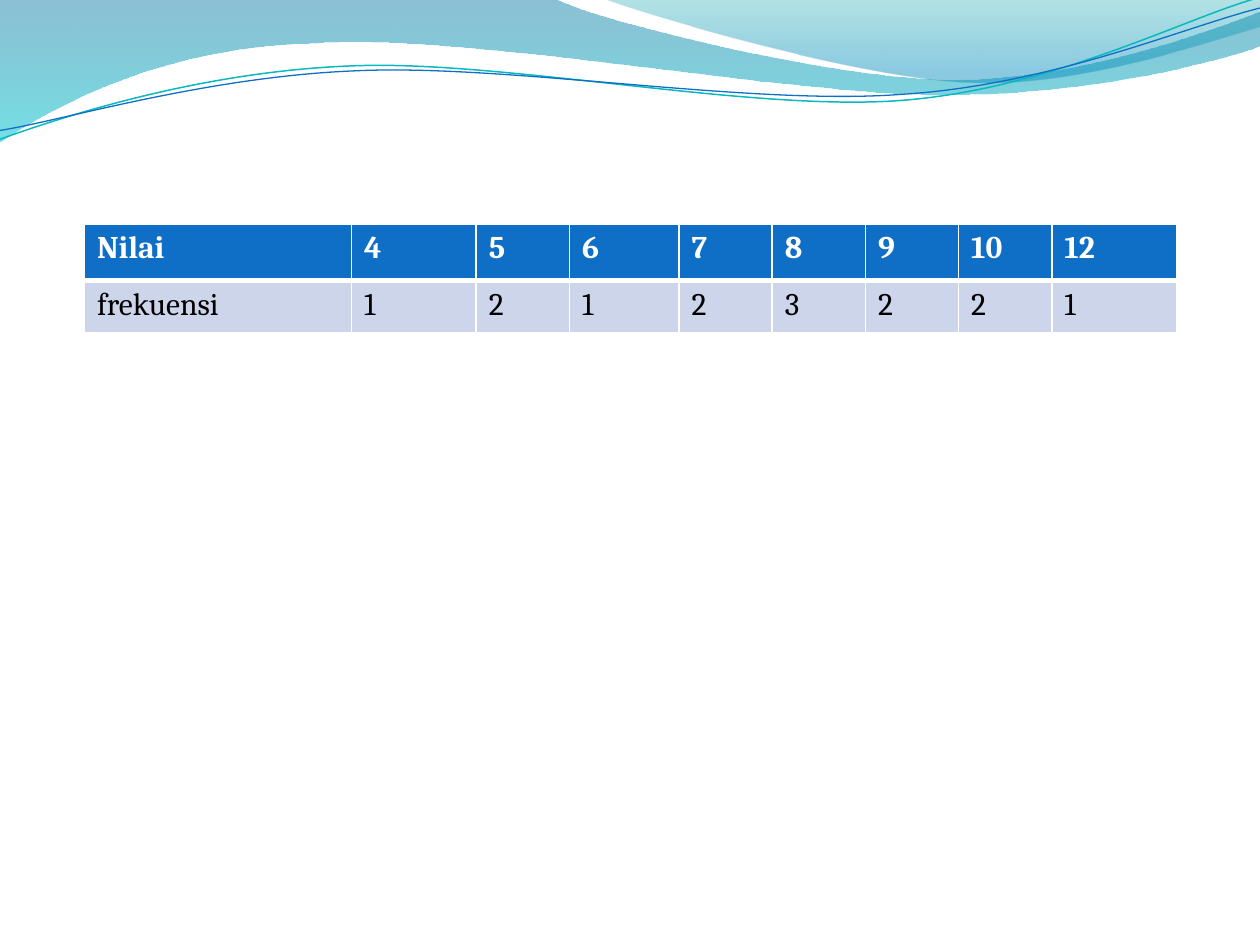
import pptx
import pptx.dml.color
import pptx.oxml
import pptx.oxml.ns
import pptx.util

WHITE = pptx.dml.color.RGBColor(0xFF, 0xFF, 0xFF)
BLACK = pptx.dml.color.RGBColor(0x00, 0x00, 0x00)
BLUE = pptx.dml.color.RGBColor(0x0F, 0x6F, 0xC6)
TEAL = pptx.dml.color.RGBColor(0x0A, 0xB8, 0xBF)
PALE_BLUE = pptx.dml.color.RGBColor(0xCC, 0xD5, 0xEA)
DEEP_SEA = pptx.dml.color.RGBColor(0x00, 0x74, 0xA1)
CYAN = pptx.dml.color.RGBColor(0x00, 0xC6, 0xCF)
SEA_GREEN = pptx.dml.color.RGBColor(0x00, 0xA1, 0xA9)
SKY = pptx.dml.color.RGBColor(0x00, 0x8B, 0xBF)

presentation = pptx.Presentation()
presentation.slide_width = pptx.util.Inches(10)
presentation.slide_height = pptx.util.Inches(7.5)
COLUMN = presentation.slide_width / 100
ROW = presentation.slide_height / 75
slide = presentation.slides.add_slide(presentation.slide_layouts[6])


def add_wave(start, segments, closed):
    points = [start, *(point for segment in segments for point in segment)]
    scaled = [(x * COLUMN, y * ROW) for x, y in points]
    builder = slide.shapes.build_freeform(*scaled[0], scale=1.0)
    builder.add_line_segments(scaled[1:], close=closed)
    shape = builder.convert_to_shape()
    shape.shadow.inherit = False
    lines = iter(shape._element.xpath(".//a:path/a:lnTo"))
    for segment in segments:
        controls = [next(lines) for point in segment]
        if len(controls) == 3:
            curve = pptx.oxml.parse_xml(
                f'<a:cubicBezTo {pptx.oxml.ns.nsdecls("a")}/>'
            )
            controls[0].addprevious(curve)
            for control in controls:
                curve.append(control[0])
                control.getparent().remove(control)
    return shape


def add_border(cell, side, width):
    properties = cell._tc.get_or_add_tcPr()
    properties.append(pptx.oxml.parse_xml(
        f'<a:{side} {pptx.oxml.ns.nsdecls("a")} w="{pptx.util.Pt(width)}">'
        f'<a:solidFill><a:srgbClr val="{WHITE}"/></a:solidFill></a:{side}>'
    ))


filled_waves = [
    (
        (0, 0),
        [
            [(44, -0.1)],
            [(47.6, 1.7), (66.4, 6.3), (75.8, 6.3)],
            [(85.3, 6.3), (95.8, 2.6), (100, 0.9)],
            [(100.1, 3.6)],
            [(98.3, 4.4), (87, 7.6), (74.6, 7.5)],
            [(62.2, 7.5), (38.2, 2.8), (25.7, 3.4)],
            [(12.9, 3.6), (4.6, 8.3), (-0.1, 11.3)],
            [(0, 0)],
        ],
        [(0, DEEP_SEA, 45), (1, CYAN, 55)],
    ),
    (
        (47.9, -0.1),
        [
            [(50.9, 1.1), (68.2, 6.2), (76.9, 6.5)],
            [(85.6, 6.9), (96.1, 3.2), (100, 2.1)],
            [(100, 0)],
            [(47.9, -0.1)],
        ],
        [(0, SEA_GREEN, 30), (0.8, SKY, 45)],
    ),
]
for start, segments, stops in filled_waves:
    wave = add_wave(start, segments, True)
    wave.line.fill.background()
    wave.fill.gradient()
    wave.fill.gradient_angle = 270
    for stop, (position, color, opacity) in zip(wave.fill.gradient_stops, stops):
        stop.position = position
        stop.color.rgb = color
    for element, (position, color, opacity) in zip(
        wave._element.xpath(".//a:gs/a:srgbClr"), stops
    ):
        element.append(pptx.oxml.parse_xml(
            f'<a:alpha {pptx.oxml.ns.nsdecls("a")} val="{opacity * 1000}"/>'
        ))

line_waves = [
    (
        (-0.2, 8.7),
        [
            [(4.7, 7.2), (15.8, 4.1), (27.8, 4.2)],
            [(39.6, 4.2), (59.1, 9.3), (71.2, 9)],
            [(83.2, 8.7), (94, 3.6), (100, 2.2)],
        ],
        TEAL,
        0.85,
    ),
    (
        (-0.2, 8),
        [
            [(4.6, 7.5), (16.4, 4.5), (28.3, 4.6)],
            [(40.3, 4.6), (59.6, 8.9), (71.6, 8.5)],
            [(83.5, 8.3), (94.2, 4.2), (100.2, 3)],
        ],
        BLUE,
        0.75,
    ),
]
for start, segments, color, width in line_waves:
    wave = add_wave(start, segments, False)
    wave.rotation = 357.3
    wave.fill.background()
    wave.line.color.rgb = color
    wave.line.width = pptx.util.Pt(width)

table_rows = [
    ["Nilai", "4", "5", "6", "7", "8", "9", "10", "12"],
    ["frekuensi", "1", "2", "1", "2", "3", "2", "2", "1"],
]
column_spans = [21.2, 9.9, 7.4, 8.7, 7.4, 7.4, 7.4, 7.4, 9.9]
row_spans = [4.45, 4.2]
row_formats = [
    {
        "fill": BLUE,
        "color": WHITE,
        "font": {"name": "Cambria", "size": pptx.util.Pt(18), "bold": True},
        "borders": {"lnL": 1, "lnR": 1, "lnT": 1, "lnB": 3},
    },
    {
        "fill": PALE_BLUE,
        "color": BLACK,
        "font": {"name": "Cambria", "size": pptx.util.Pt(18), "bold": False},
        "borders": {"lnL": 1, "lnR": 1, "lnT": 3, "lnB": 1},
    },
]
table = slide.shapes.add_table(
    len(row_spans), len(column_spans),
    int(6.7 * COLUMN), int(17.8 * ROW),
    int(sum(column_spans) * COLUMN), int(sum(row_spans) * ROW),
).table
for table_column, span in zip(table.columns, column_spans):
    table_column.width = int(span * COLUMN)
for table_row, span, texts, row_format in zip(
    table.rows, row_spans, table_rows, row_formats
):
    table_row.height = int(span * ROW)
    for cell, text in zip(table_row.cells, texts):
        for side, width in row_format["borders"].items():
            add_border(cell, side, width)
        cell.fill.solid()
        cell.fill.fore_color.rgb = row_format["fill"]
        run = cell.text_frame.paragraphs[0].add_run()
        run.text = text
        for attribute, value in row_format["font"].items():
            setattr(run.font, attribute, value)
        run.font.color.rgb = row_format["color"]

presentation.save("out.pptx")
